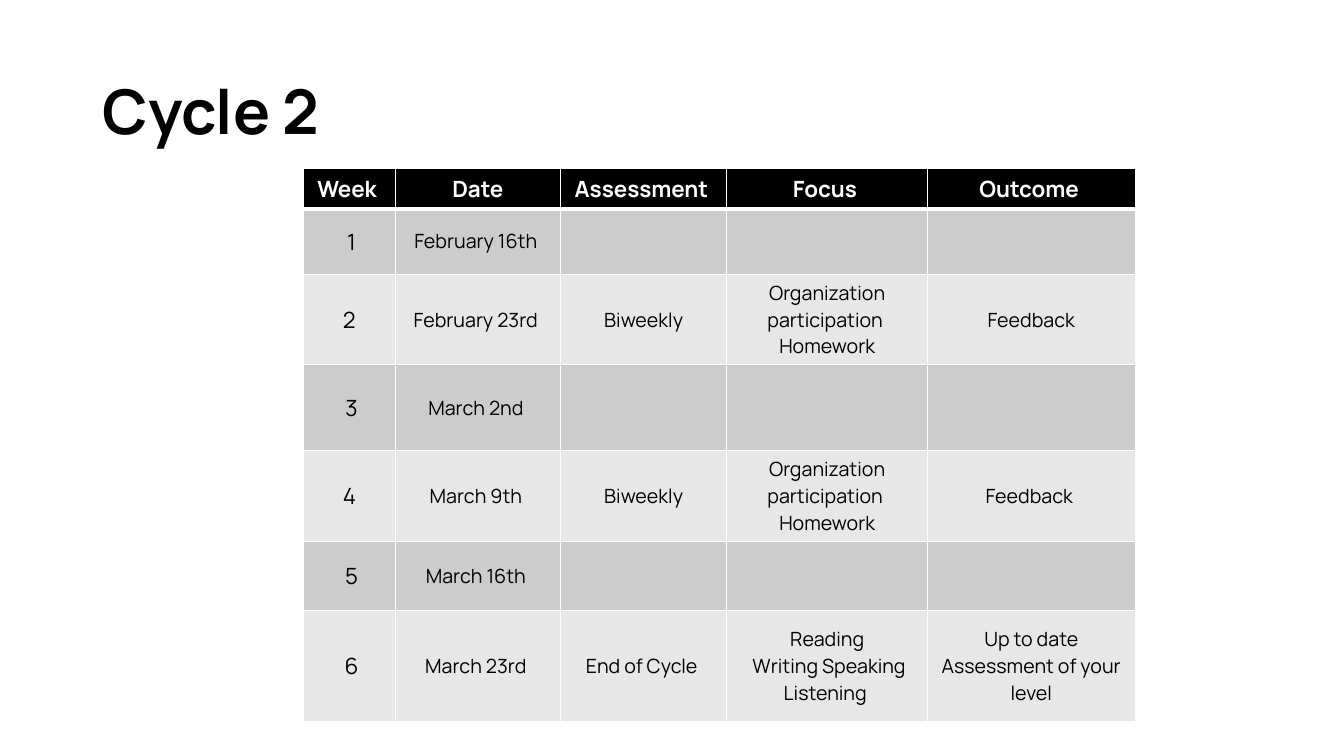
from pptx import Presentation
from pptx.dml.color import RGBColor
from pptx.enum.text import MSO_ANCHOR as Anchor, PP_ALIGN as Align
from pptx.oxml.ns import qn
from pptx.util import Inches, Pt
from lxml.etree import SubElement

# Content
TITLE = "Cycle 2"
HEADINGS = ["Week ", "Date", "Assessment ", "Focus ", "Outcome "]
BIWEEKLY_FOCUS = "Organization participation \nHomework"
WEEKS = [
    (" 1", "February 16th ", "", "", ""),
    ("2", "February 23rd ", "Biweekly", BIWEEKLY_FOCUS, "Feedback"),
    (" 3", "March 2nd ", "", "", ""),
    ("4", "March 9th ", "Biweekly", BIWEEKLY_FOCUS, "Feedback "),
    (" 5", "March 16th ", "", "", ""),
    (" 6", "March 23rd ", "End of Cycle ",
     "Reading\n Writing Speaking Listening ",
     "Up to date Assessment of your level"),
]

# Layout and style
COLUMN_WIDTHS = [0.91, 1.64, 1.65, 1.99, 2.06]
ROW_HEIGHTS = [0.4, 0.65, 0.9, 0.85, 0.9, 0.69, 1.1]
FONT = "Manrope"
BLACK = RGBColor(0x00, 0x00, 0x00)
WHITE = RGBColor(0xFF, 0xFF, 0xFF)
DARK_BAND = RGBColor(0xCC, 0xCC, 0xCC)
LIGHT_BAND = RGBColor(0xE7, 0xE7, 0xE7)


def write(frame, text, *, size, color=BLACK, bold=False, align=Align.LEFT, spacing=None):
    """Fill a text frame, one paragraph per line of text."""
    for index, line in enumerate(text.split("\n")):
        para = frame.add_paragraph() if index else frame.paragraphs[0]
        para.alignment = align
        if spacing:
            para.line_spacing = spacing
        span = para.add_run()
        span.text = line
        span.font.name = FONT
        span.font.size = Pt(size)
        span.font.bold = bold
        span.font.color.rgb = color


def set_borders(cell, bottoms):
    """Draw white rules round a cell; sides not listed are 1 point wide."""
    properties = cell._tc.get_or_add_tcPr()
    for side in ("L", "R", "T", "B"):
        width = bottoms.get(side, 1)
        line = SubElement(properties, qn(f"a:ln{side}"), w=str(Pt(width)))
        fill = SubElement(line, qn("a:solidFill"))
        SubElement(fill, qn("a:srgbClr"), val=str(WHITE))


def add_title(page):
    box = page.shapes.add_textbox(Inches(0.92), Inches(0.6), Inches(5.51), Inches(1.07))
    frame = box.text_frame
    frame.word_wrap = True
    frame.vertical_anchor = Anchor.MIDDLE
    write(frame, TITLE, size=44, bold=True, spacing=0.9)


def add_schedule(page):
    rows = [HEADINGS, *WEEKS]
    table = page.shapes.add_table(
        len(rows), len(HEADINGS), Inches(3.01), Inches(1.67),
        Inches(sum(COLUMN_WIDTHS)), Inches(sum(ROW_HEIGHTS))).table
    for column, width in zip(table.columns, COLUMN_WIDTHS):
        column.width = Inches(width)
    for row, height in zip(table.rows, ROW_HEIGHTS):
        row.height = Inches(height)

    for r, texts in enumerate(rows):
        header = r == 0
        band = BLACK if header else DARK_BAND if r % 2 else LIGHT_BAND
        for c, text in enumerate(texts):
            cell = table.cell(r, c)
            cell.vertical_anchor = Anchor.TOP if header else Anchor.MIDDLE
            # The rule under the header is heavier, on both cells that share it
            heavy = {"B": 3} if header else {"T": 3} if r == 1 else {}
            set_borders(cell, heavy)
            cell.fill.solid()
            cell.fill.fore_color.rgb = band
            if text:
                write(cell.text_frame, text, size=16 if header or c == 0 else 14,
                      color=WHITE if header else BLACK, bold=header, align=Align.CENTER)


def main():
    deck = Presentation()
    deck.slide_width, deck.slide_height = Inches(13.33), Inches(7.5)
    page = deck.slides.add_slide(deck.slide_layouts[6])
    add_title(page)
    add_schedule(page)
    deck.save("out.pptx")


if __name__ == "__main__":
    main()
